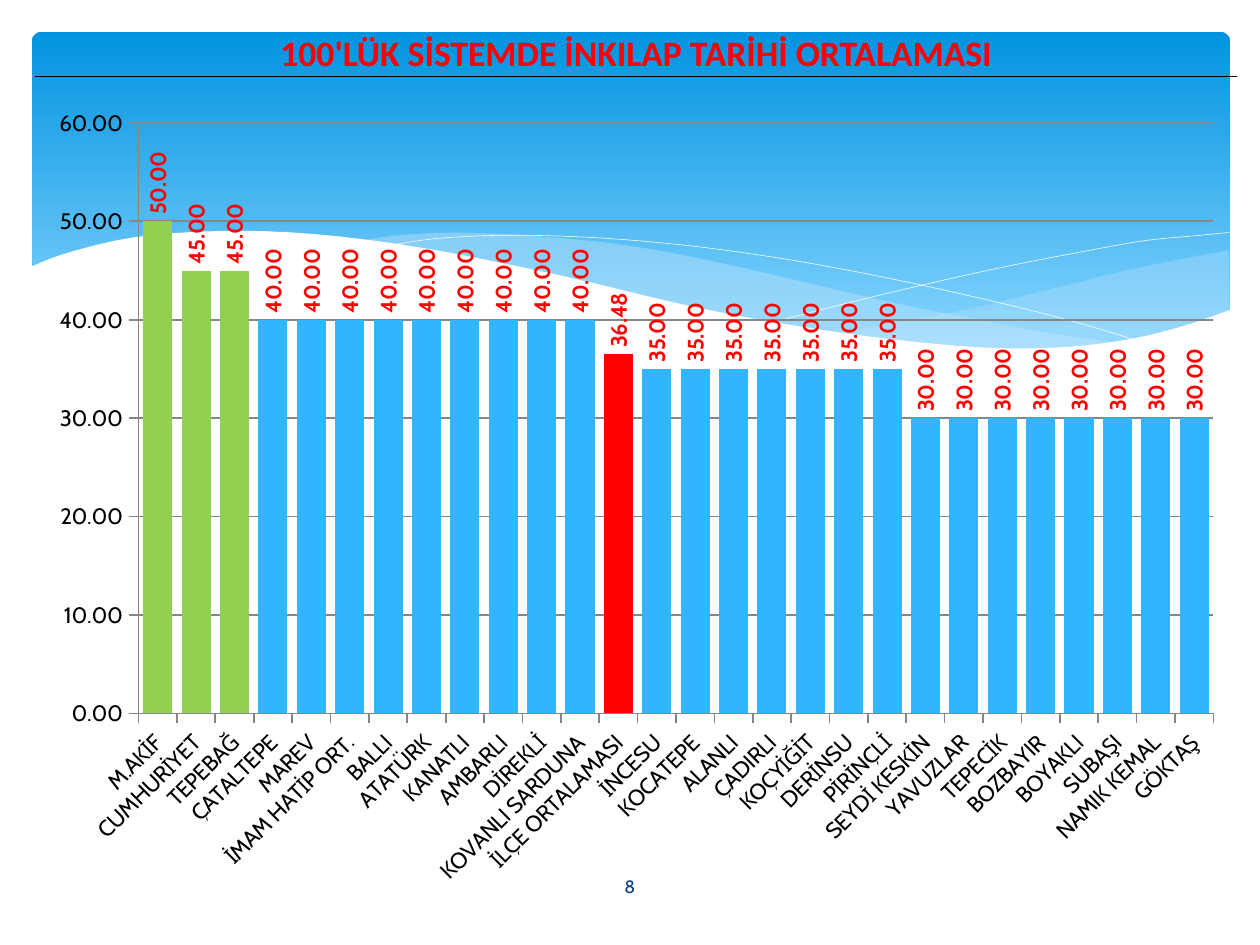
from lxml.etree import SubElement
from pptx import Presentation
from pptx.chart.data import CategoryChartData
from pptx.dml.color import RGBColor
from pptx.enum.chart import XL_CHART_TYPE, XL_LABEL_POSITION, XL_TICK_MARK
from pptx.enum.shapes import MSO_SHAPE
from pptx.enum.text import MSO_ANCHOR, PP_ALIGN
from pptx.oxml import parse_xml
from pptx.oxml.ns import nsdecls, qn
from pptx.util import Pt

HUES = {"sky": "0293E0", "pale": "83D3FE", "mist": "C6E7FC", "white": "FFFFFF",
        "navy": "073E87", "red": "FF0000", "black": "000000", "grid": "868686",
        "bar": "31B6FD", "green": "92D050"}

# Each wave is a list of curves, in points from the corner of the banner
TAIL = [[(536.4, 97.9), (513.4, 102.2), (488.9, 107.3), (471.6, 111.6),
         (439.9, 119.5), (411.1, 126), (383.8, 131), (359.3, 135.4)],
        [(359.3, 135.4), (391, 139.7), (419.8, 141.8), (445, 142.6),
         (473, 141.1), (496.8, 137.5), (517.7, 131.8), (536.4, 125.3)]]
BAND = [[(489.6, 139.7), (457.9, 135.4), (423.4, 128.9), (383.8, 121),
         (340.6, 110.9), (298.8, 101.5), (261.4, 95), (222.5, 91.4),
         (189.4, 90), (162.7, 91.4), (147.6, 93.6)],
        [(147.6, 93.6), (178.6, 97.9), (213.8, 105.1), (239, 110.9),
         (284.4, 121), (324.7, 129.6), (361.4, 136.1), (393.1, 139.7),
         (421.9, 142.6), (452.9, 142.6), (475.2, 141.1), (489.6, 139.7)]]
FALL = [[(160.6, 95.8), (179.3, 92.9), (204.5, 91.4), (229.7, 91.4),
         (261.4, 92.9), (299.5, 96.5), (344.2, 103), (396, 113),
         (455, 126.7), (497.5, 139)]]
RISE = [[(331.9, 130.3), (365, 121.7), (407.5, 111.6), (440.6, 104.4),
         (474.5, 97.9), (499, 93.6), (522, 91.4), (536.4, 90)]]
FRONT = [[(-1.4, 105.8), (15.1, 99.4), (45.4, 92.2), (85, 89.3), (126.7, 90.7),
          (177.1, 97.2), (237.6, 109.4), (298.8, 123.8), (351.4, 133.2),
          (396, 139), (433.4, 141.8), (465.8, 141.1), (493.2, 137.5),
          (516.2, 131.8), (537.1, 124.6)],
         [(537.1, 171.4), (-1.4, 171.4)]]

MEANS = [("M.AKİF", 50), ("CUMHURİYET", 45), ("TEPEBAĞ", 45)]
MEANS += [(name, 40) for name in (
    "ÇATALTEPE", "MAREV", "İMAM HATİP ORT.", "BALLI", "ATATÜRK", "KANATLI",
    "AMBARLI", "DİREKLİ", "KOVANLI SARDUNA")]
MEANS += [("İLÇE ORTALAMASI", 36.48)]
MEANS += [(name, 35) for name in (
    "İNCESU", "KOCATEPE", "ALANLI", "ÇADIRLI", "KOÇYİĞİT", "DERİNSU", "PİRİNÇLİ")]
MEANS += [(name, 30) for name in (
    "SEYDİ KESKİN", "YAVUZLAR", "TEPECİK", "BOZBAYIR", "BOYAKLI", "SUBAŞI",
    "NAMIK KEMAL", "GÖKTAŞ")]


def hue(key):
    return RGBColor.from_string(HUES[key])


def style(item, **form):
    for key, value in form.items():
        setattr(item, key, value)


def type_set(font, key, **form):
    style(font, **form)
    font.color.rgb = hue(key)


def write(frame, text, key, **form):
    line = frame.paragraphs[0]
    line.alignment = PP_ALIGN.CENTER
    run = line.add_run()
    run.text = text
    type_set(run.font, key, **form)


def smooth(knots, steps=4):
    """Return points on a spline that runs through all the knots."""
    ends = [knots[0], *knots, knots[-1]]
    dots = [knots[0]]
    for a, b, c, d in zip(ends, ends[1:], ends[2:], ends[3:]):
        for step in range(1, steps + 1):
            t = step / steps
            dots.append(tuple(
                (2 * q + (r - p) * t + (2 * p - 5 * q + 4 * r - s) * t ** 2
                 + (3 * q - p - 3 * r + s) * t ** 3) / 2
                for p, q, r, s in zip(a, b, c, d)))
    return dots


def wave(slide, left, top, curves, fill=None, alpha=100):
    dots = [(Pt(left + x), Pt(top + y)) for knots in curves for x, y in smooth(knots)]
    pen = slide.shapes.build_freeform(*dots[0])
    pen.add_line_segments(dots[1:], close=bool(fill))
    shape = pen.convert_to_shape()
    shape.shadow.inherit = False
    if fill:
        shape.fill.solid()
        shape.fill.fore_color.rgb = hue(fill)
        shape.line.fill.background()
        if alpha < 100:
            tint = shape.fill._xPr.find(".//" + qn("a:srgbClr"))
            SubElement(tint, qn("a:alpha"), val=str(alpha * 1000))
    else:
        shape.fill.background()
        shape.line.color.rgb = hue("white")
        shape.line.width = Pt(0.25)


def banner(slide, left, top, width, height):
    # Blue panel
    panel = slide.shapes.add_shape(
        MSO_SHAPE.ROUNDED_RECTANGLE, Pt(left), Pt(top), Pt(width), Pt(height))
    panel.adjustments[0] = 0.03
    panel.shadow.inherit = False
    panel.line.fill.background()
    panel.fill.gradient()
    panel.fill.gradient_angle = 270
    for stop, key, place in zip(panel.fill.gradient_stops, ("sky", "pale"), (0, 0.9)):
        stop.color.rgb = hue(key)
        stop.position = place
    # Waves, from back to front
    for curves, fill, alpha in ((TAIL, "mist", 29), (BAND, "mist", 40),
                                (FALL, None, 100), (RISE, None, 100),
                                (FRONT, "white", 100)):
        wave(slide, left, top, curves, fill, alpha)


def number(slide, left, top, width, height):
    box = slide.shapes.add_textbox(Pt(left), Pt(top), Pt(width), Pt(height))
    style(box.text_frame, word_wrap=True, vertical_anchor=MSO_ANCHOR.MIDDLE)
    write(box.text_frame, "8", "navy", name="Cabin", size=Pt(8))


def title(slide, left, top, width, height):
    table = slide.shapes.add_table(
        1, 1, Pt(left), Pt(top), Pt(width), Pt(height)).table
    style(table, first_row=False, horz_banding=False)
    cell = table.cell(0, 0)
    style(cell, margin_left=Pt(0.7), margin_right=Pt(0.7), margin_top=Pt(0.7),
          margin_bottom=0, vertical_anchor=MSO_ANCHOR.BOTTOM)
    cell.fill.background()
    write(cell.text_frame, "100'LÜK SİSTEMDE İNKILAP TARİHİ ORTALAMASI", "red",
          name="Calibri", size=Pt(16), bold=True)
    # Rule under the title only
    rule = f'<a:solidFill><a:srgbClr val="{HUES["black"]}"/></a:solidFill>'
    for spot, side in enumerate("LRTB"):
        paint = rule if side == "B" else "<a:noFill/>"
        cell._tc.get_or_add_tcPr().insert(spot, parse_xml(
            f'<a:ln{side} {nsdecls("a")} w="{Pt(0.5)}">{paint}</a:ln{side}>'))


def turn(text, angle):
    body = text.find(".//" + qn("a:bodyPr"))
    body.set("rot", str(angle * 60000))
    body.set("vert", "horz")


def graph(slide, left, top, width, height):
    data = CategoryChartData(number_format="0.00")
    data.categories = [name for name, mean in MEANS]
    data.add_series("Series 1", [mean for name, mean in MEANS])
    chart = slide.shapes.add_chart(
        XL_CHART_TYPE.COLUMN_CLUSTERED, Pt(left), Pt(top), Pt(width), Pt(height),
        data).chart
    style(chart, has_legend=False, has_title=False)
    type_set(chart.font, "black", name="Cabin", size=Pt(10))
    # Axes
    scale, names = chart.value_axis, chart.category_axis
    style(scale, minimum_scale=0, maximum_scale=60, major_unit=10,
          has_major_gridlines=True)
    style(scale.tick_labels, number_format="0.00", number_format_is_linked=False)
    for axis in (scale, names):
        axis.major_tick_mark = XL_TICK_MARK.OUTSIDE
        type_set(axis.tick_labels.font, "black", name="Cabin", size=Pt(10))
    for part in (scale, names, scale.major_gridlines):
        part.format.line.color.rgb = hue("grid")
        part.format.line.width = Pt(0.75)
    turn(names._element.find(qn("c:txPr")), -45)
    # Bars
    plot = chart.plots[0]
    style(plot, gap_width=32, vary_by_categories=False)
    bars = plot.series[0]
    bars.format.fill.solid()
    bars.format.fill.fore_color.rgb = hue("bar")
    for spot, key in {0: "green", 1: "green", 2: "green", 12: "red"}.items():
        fill = bars.points[spot].format.fill
        fill.solid()
        fill.fore_color.rgb = hue(key)
    # Values above the bars
    tags = bars.data_labels
    style(tags, show_value=True, number_format="0.00", number_format_is_linked=False,
          position=XL_LABEL_POSITION.OUTSIDE_END)
    type_set(tags.font, "red", name="Cabin", size=Pt(10), bold=True)
    turn(tags._element.find(qn("c:txPr")), -90)
    # Plot area within the chart
    area = chart._chartSpace.chart.plotArea
    for old in area.findall(qn("c:layout")):
        area.remove(old)
    sizes = {"layoutTarget": "inner", "xMode": "edge", "yMode": "edge",
             "x": 46.3 / width, "y": 13.3 / height,
             "w": 481.6 / width, "h": 264.6 / height}
    marks = "".join(f'<c:{key} val="{value}"/>' for key, value in sizes.items())
    area.insert(0, parse_xml(
        f'<c:layout {nsdecls("c")}><c:manualLayout>{marks}</c:manualLayout></c:layout>'))


def main():
    deck = Presentation()
    style(deck, slide_width=Pt(564.5), slide_height=Pt(423.4))
    slide = deck.slides.add_slide(deck.slide_layouts[6])
    banner(slide, 14.2, 14.2, 537, 152.6)
    number(slide, 246.2, 385.9, 72, 22.3)
    title(slide, 15.8, 13.2, 538.6, 20.9)
    graph(slide, 15.8, 41.8, 538.6, 362.9)
    deck.save("out.pptx")


if __name__ == "__main__":
    main()
